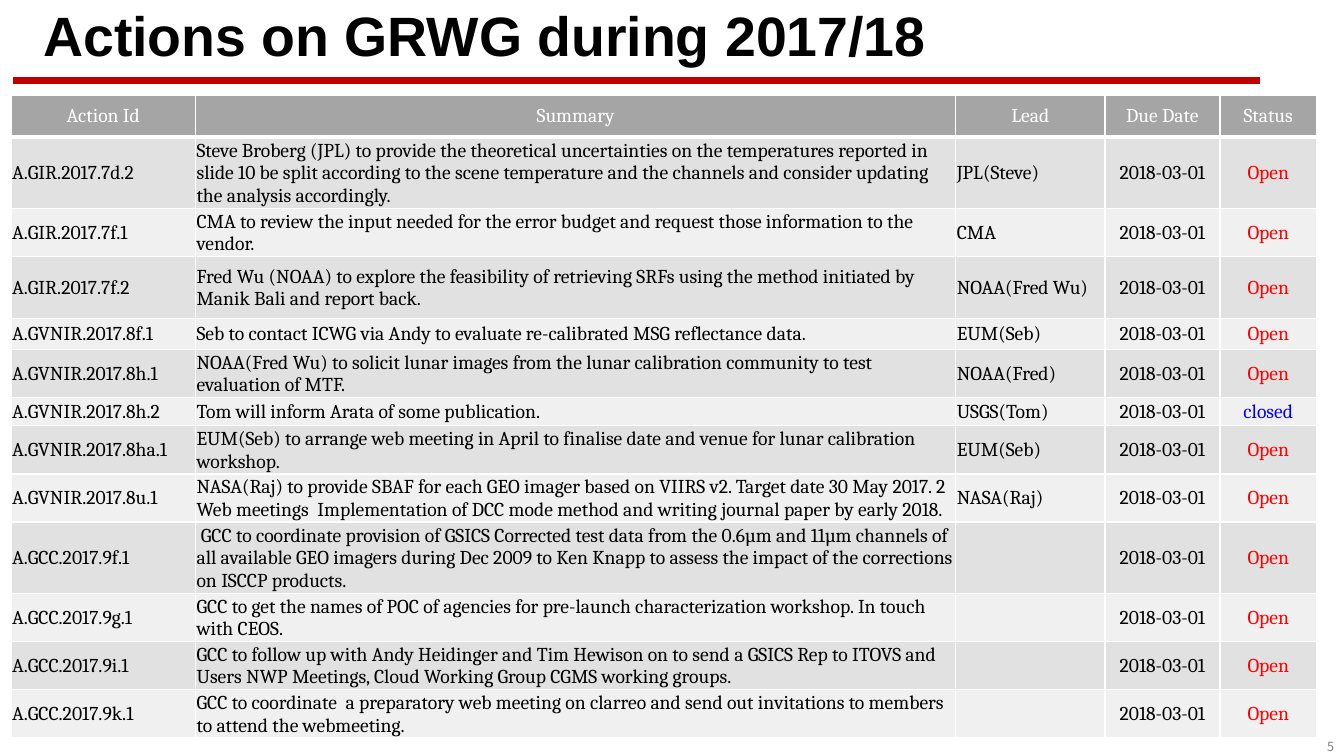
import pptx
import pptx.dml.color
import pptx.enum.shapes
import pptx.enum.text
import pptx.oxml
import pptx.oxml.ns
import pptx.util
from lxml import etree

Inches = pptx.util.Inches
Pt = pptx.util.Pt
RGBColor = pptx.dml.color.RGBColor
PP_ALIGN = pptx.enum.text.PP_ALIGN
MIDDLE = pptx.enum.text.MSO_ANCHOR.MIDDLE

BLACK = RGBColor(0x00, 0x00, 0x00)
WHITE = RGBColor(0xFF, 0xFF, 0xFF)
GREY = RGBColor(0x80, 0x80, 0x80)
RULE_RED = RGBColor(0xC0, 0x00, 0x00)
OPEN_RED = RGBColor(0xFF, 0x00, 0x00)
CLOSED_BLUE = RGBColor(0x00, 0x00, 0xFF)
HEADER_FILL = RGBColor(0xA5, 0xA5, 0xA5)
BAND_FILLS = (RGBColor(0xE1, 0xE1, 0xE1), RGBColor(0xF0, 0xF0, 0xF0))

DUE_DATE = "2018-03-01"
HEADERS = ("Action Id", "Summary", "Lead", "Due Date", "Status")
COL_WIDTHS = (1.83, 7.54, 1.48, 1.14, 0.96)
HEADER_HEIGHT = 0.41
HEADER_INSETS = (0.12, 0.05, 0.12, 0.05)
BODY_INSETS = (0.01, 0.01, 0.01, 0)

# row height, action id, summary, lead, status
ACTIONS = [
    (0.71, "A.GIR.2017.7d.2",
     "Steve Broberg (JPL) to provide the theoretical uncertainties on the temperatures reported in "
     "slide 10 be split according to the scene temperature and the channels and consider updating "
     "the analysis accordingly.", "JPL(Steve)", "Open"),
    (0.47, "A.GIR.2017.7f.1",
     "CMA to review the input needed for the error budget and request those information to the "
     "vendor.", "CMA", "Open"),
    (0.61, "A.GIR.2017.7f.2",
     "Fred Wu (NOAA) to explore the feasibility of retrieving SRFs using the method initiated by "
     "Manik Bali and report back.", "NOAA(Fred Wu)", "Open"),
    (0.31, "A.GVNIR.2017.8f.1",
     "Seb to contact ICWG via Andy to evaluate re-calibrated MSG reflectance data.",
     "EUM(Seb)", "Open"),
    (0.41, "A.GVNIR.2017.8h.1",
     "NOAA(Fred Wu) to solicit lunar images from the lunar calibration community to test "
     "evaluation of MTF.", "NOAA(Fred)", "Open"),
    (0.28, "A.GVNIR.2017.8h.2", "Tom will inform Arata of some publication.",
     "USGS(Tom)", "closed"),
    (0.41, "A.GVNIR.2017.8ha.1",
     "EUM(Seb) to arrange web meeting in April to finalise date and venue for lunar calibration "
     "workshop.", "EUM(Seb)", "Open"),
    (0.41, "A.GVNIR.2017.8u.1",
     "NASA(Raj) to provide SBAF for each GEO imager based on VIIRS v2. Target date 30 May 2017. 2 "
     "Web meetings  Implementation of DCC mode method and writing journal paper by early 2018.",
     "NASA(Raj)", "Open"),
    (0.41, "A.GCC.2017.9f.1",
     " GCC to coordinate provision of GSICS Corrected test data from the 0.6µm and 11µm channels of "
     "all available GEO imagers during Dec 2009 to Ken Knapp to assess the impact of the "
     "corrections on ISCCP products.", "", "Open"),
    (0.41, "A.GCC.2017.9g.1",
     "GCC to get the names of POC of agencies for pre-launch characterization workshop. In touch "
     "with CEOS.", "", "Open"),
    (0.41, "A.GCC.2017.9i.1",
     "GCC to follow up with Andy Heidinger and Tim Hewison on to send a GSICS Rep to ITOVS and "
     "Users NWP Meetings, Cloud Working Group CGMS working groups.", "", "Open"),
    (0.41, "A.GCC.2017.9k.1",
     "GCC to coordinate  a preparatory web meeting on clarreo and send out invitations to members "
     "to attend the webmeeting.", "", "Open"),
]


class SlideBuilder:
    title_font = "Arial"
    table_font = "Cambria"
    number_font = "Noto Sans CJK KR"

    def __init__(self, slide):
        self.slide = slide

    def add_run(self, p, text, font, size, color, bold=False):
        r = p.add_run()
        r.text = text
        r.font.name = font
        r.font.size = Pt(size)
        r.font.bold = bold
        r.font.color.rgb = color
        # East Asian typeface for the same run
        ea = etree.SubElement(r.font._element, pptx.oxml.ns.qn("a:ea"))
        ea.set("typeface", font)

    def text(self, box, text, font, size, color, bold=False, align=PP_ALIGN.LEFT, spacing=1.0):
        sp = self.slide.shapes.add_textbox(*map(Inches, box))
        tf = sp.text_frame
        tf.word_wrap = True
        tf.vertical_anchor = MIDDLE
        p = tf.paragraphs[0]
        p.alignment = align
        p.line_spacing = spacing
        self.add_run(p, text, font, size, color, bold)

    def line(self, x1, y1, x2, y2, color, width):
        cxn = self.slide.shapes.add_connector(
            pptx.enum.shapes.MSO_CONNECTOR.STRAIGHT, *map(Inches, (x1, y1, x2, y2)))
        cxn.line.color.rgb = color
        cxn.line.width = Pt(width)
        etree.SubElement(cxn._element.spPr, pptx.oxml.ns.qn("a:effectLst"))

    def borders(self, cell, color, bottom):
        """Draw 1 pt cell borders, with a bottom border of its own width."""
        tc_pr = cell._tc.get_or_add_tcPr()
        for i, (side, width) in enumerate((("L", 1), ("R", 1), ("T", 1), ("B", bottom))):
            tc_pr.insert(i, pptx.oxml.parse_xml(
                f'<a:ln{side} {pptx.oxml.ns.nsdecls("a")} w="{Pt(width)}">'
                f'<a:solidFill><a:srgbClr val="{color}"/></a:solidFill></a:ln{side}>'))

    def cell(self, cell, text, color, fill, insets, align, bottom=1):
        cell.fill.solid()
        cell.fill.fore_color.rgb = fill
        self.borders(cell, WHITE, bottom)
        cell.vertical_anchor = MIDDLE
        cell.margin_left, cell.margin_top, cell.margin_right, cell.margin_bottom = map(Inches, insets)
        if text:
            p = cell.text_frame.paragraphs[0]
            p.alignment = align
            self.add_run(p, text, self.table_font, 14, color)

    def action_table(self, left, top):
        heights = [HEADER_HEIGHT] + [action[0] for action in ACTIONS]
        frame = self.slide.shapes.add_table(
            len(heights), len(HEADERS), Inches(left), Inches(top),
            Inches(sum(COL_WIDTHS)), Inches(sum(heights)))
        table = frame.table
        table.first_row = table.horz_banding = False
        for column, width in zip(table.columns, COL_WIDTHS):
            column.width = Inches(width)
        for row, height in zip(table.rows, heights):
            row.height = Inches(height)
        for c, header in enumerate(HEADERS):
            self.cell(table.cell(0, c), header, WHITE, HEADER_FILL, HEADER_INSETS,
                      PP_ALIGN.CENTER, bottom=3)
        for i, (_, action_id, summary, lead, status) in enumerate(ACTIONS):
            status_color = OPEN_RED if status == "Open" else CLOSED_BLUE
            for c, text in enumerate((action_id, summary, lead, DUE_DATE, status)):
                self.cell(table.cell(i + 1, c), text, status_color if c == 4 else BLACK,
                          BAND_FILLS[i % 2], BODY_INSETS,
                          PP_ALIGN.CENTER if c >= 3 else PP_ALIGN.LEFT)


def main():
    prs = pptx.Presentation()
    prs.slide_width, prs.slide_height = Inches(13.33), Inches(7.5)
    s = SlideBuilder(prs.slides.add_slide(prs.slide_layouts[6]))
    s.line(0.13, 0.8, 12.5, 0.8, RULE_RED, 4.5)
    s.text((12.19, 7.28, 1.14, 0.25), "5", s.number_font, 9, GREY, align=PP_ALIGN.RIGHT)
    s.text((0.33, 0.08, 11.5, 0.6), "Actions on GRWG during 2017/18", s.title_font, 39.6, BLACK,
           bold=True, spacing=0.9)
    s.action_table(0.11, 0.95)
    prs.save("out.pptx")


if __name__ == "__main__":
    main()
